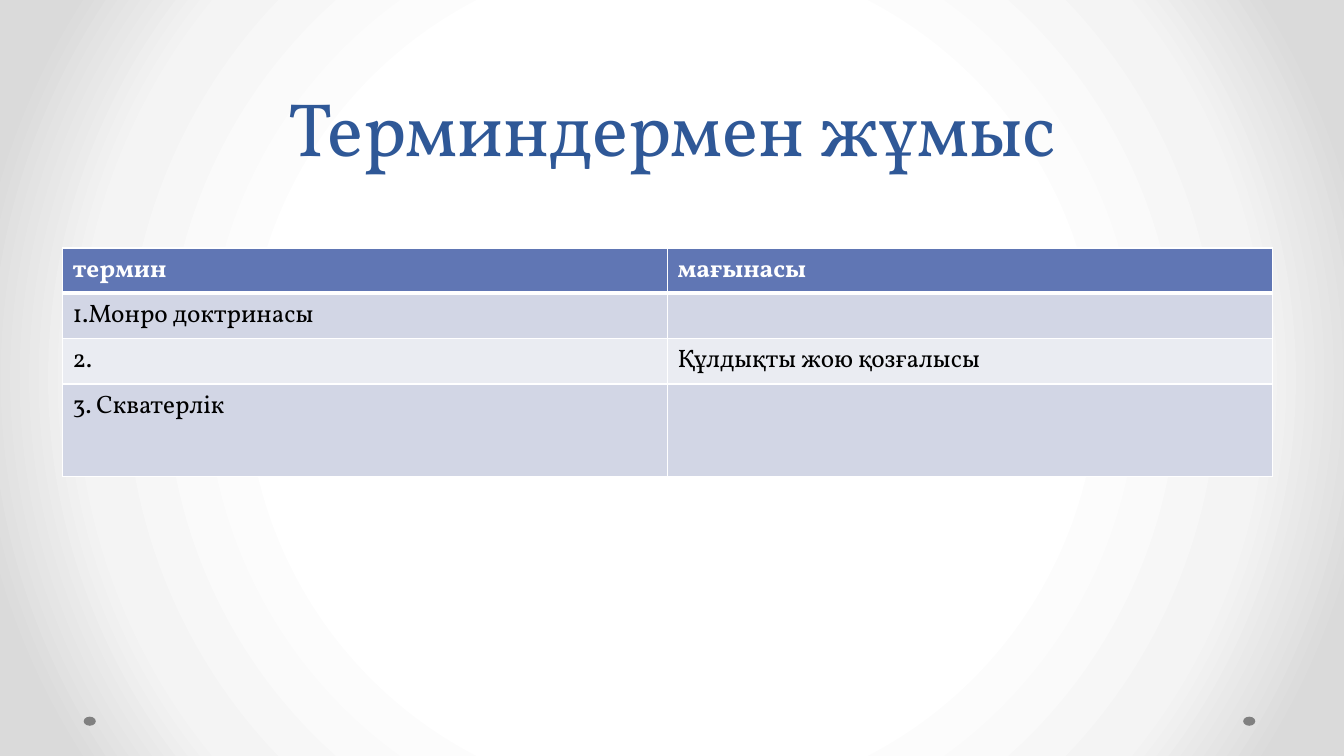
from dataclasses import dataclass

from lxml.etree import SubElement
from pptx import Presentation
from pptx.dml.color import RGBColor
from pptx.enum.shapes import MSO_SHAPE
from pptx.enum.text import MSO_ANCHOR, MSO_AUTO_SIZE, PP_ALIGN
from pptx.oxml import parse_xml
from pptx.oxml.ns import nsdecls, qn
from pptx.slide import Slide
from pptx.table import _Cell
from pptx.util import Inches, Pt

FONT = "Vollkorn"
BACKDROP_STOPS = {50: "FFFFFF", 76: "F4F4F4", 92: "DADADA"}
DOT_LEFTS = (0.83, 12.33)


@dataclass(frozen=True)
class TermRow:
    term: str
    meaning: str
    height: float
    fill: str
    color: str = "000000"
    bold: bool = False
    top: float = 1
    bottom: float = 1


TERM_ROWS = [
    TermRow("термин", "мағынасы", 0.45, "6076B4", "FFFFFF", bold=True, bottom=3),
    TermRow("1.Монро доктринасы", "", 0.45, "D2D6E5", top=3),
    TermRow("2.", "Құлдықты жою қозғалысы", 0.45, "EAECF2"),
    TermRow("3. Скватерлік", "", 0.92, "D2D6E5"),
]


def rgb(value: str) -> RGBColor:
    return RGBColor.from_string(value)


def paint_backdrop(slide: Slide) -> None:
    stops = "".join(
        f'<a:gs pos="{percent * 1000}"><a:srgbClr val="{color}"/></a:gs>'
        for percent, color in BACKDROP_STOPS.items()
    )
    backdrop = parse_xml(
        f'<p:bg {nsdecls("p", "a")}><p:bgPr><a:gradFill rotWithShape="1">'
        f'<a:gsLst>{stops}</a:gsLst><a:path path="circle">'
        '<a:fillToRect l="50000" t="50000" r="50000" b="50000"/></a:path>'
        "</a:gradFill><a:effectLst/></p:bgPr></p:bg>"
    )
    slide.element.cSld.insert(0, backdrop)


def add_dot(slide: Slide, left: float) -> None:
    dot = slide.shapes.add_shape(
        MSO_SHAPE.OVAL, Inches(left), Inches(7.11), Inches(0.12), Inches(0.09)
    )
    dot.shadow.inherit = False
    dot.fill.solid()
    dot.fill.fore_color.rgb = rgb("808080")
    dot.line.fill.background()


def write_title(slide: Slide, wording: str) -> None:
    title = slide.shapes.title
    title.left, title.top = Inches(0.67), Inches(0)
    title.width, title.height = Inches(12), Inches(1.75)
    frame = title.text_frame
    frame.text = wording
    frame.word_wrap = True
    frame.auto_size = MSO_AUTO_SIZE.NONE
    frame.vertical_anchor = MSO_ANCHOR.BOTTOM
    heading = frame.paragraphs[0]
    heading.alignment = PP_ALIGN.CENTER
    heading.line_spacing = Pt(58)
    heading.font.name = FONT
    heading.font.size = Pt(54)
    heading.font.color.rgb = rgb("2F5897")


def add_borders(cell: _Cell, top: float, bottom: float) -> None:
    properties = cell._tc.get_or_add_tcPr()
    widths = {"lnL": 1, "lnR": 1, "lnT": top, "lnB": bottom}
    for position, (side, width) in enumerate(widths.items()):
        border = SubElement(properties, qn(f"a:{side}"), w=str(Pt(width)))
        paint = SubElement(border, qn("a:solidFill"))
        SubElement(paint, qn("a:srgbClr"), val="FFFFFF")
        properties.insert(position, border)


def fill_cell(cell: _Cell, wording: str, row: TermRow) -> None:
    cell.text = wording
    cell.fill.solid()
    cell.fill.fore_color.rgb = rgb(row.fill)
    font = cell.text_frame.paragraphs[0].font
    font.name = FONT
    font.size = Pt(18)
    font.bold = row.bold
    font.color.rgb = rgb(row.color)
    add_borders(cell, row.top, row.bottom)


def add_terms(slide: Slide) -> None:
    height = sum(row.height for row in TERM_ROWS)
    terms = slide.shapes.add_table(
        len(TERM_ROWS), 2, Inches(0.62), Inches(2.46), Inches(12), Inches(height)
    ).table
    for index, row in enumerate(TERM_ROWS):
        terms.rows[index].height = Inches(row.height)
        for column, wording in enumerate((row.term, row.meaning)):
            fill_cell(terms.cell(index, column), wording, row)


def main() -> None:
    presentation = Presentation()
    presentation.slide_width = Inches(13.33)
    presentation.slide_height = Inches(7.5)
    slide = presentation.slides.add_slide(presentation.slide_layouts[5])
    paint_backdrop(slide)
    for left in DOT_LEFTS:
        add_dot(slide, left)
    write_title(slide, "Терминдермен жұмыс")
    add_terms(slide)
    presentation.save("out.pptx")


if __name__ == "__main__":
    main()
